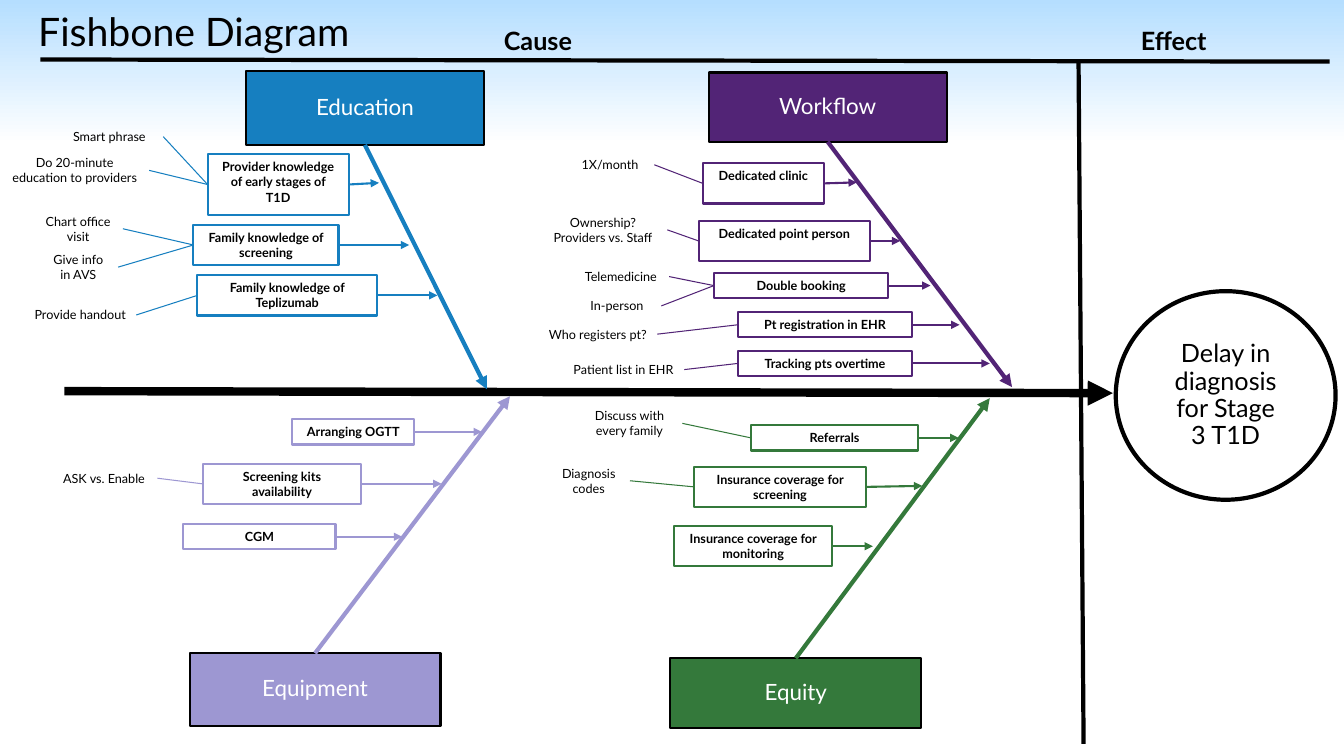
from dataclasses import dataclass
from typing import Optional

from lxml.etree import SubElement
from pptx import Presentation
from pptx.dml.color import RGBColor
from pptx.enum.shapes import MSO_CONNECTOR as Conn, MSO_SHAPE as Kind
from pptx.enum.text import MSO_ANCHOR as Anchor, PP_ALIGN as Align
from pptx.oxml.ns import qn
from pptx.shapes.autoshape import Shape
from pptx.shapes.connector import Connector
from pptx.util import Pt

BLACK, WHITE, SKY = "000000", "FFFFFF", "B5DEFF"
TOP, LEFT, BOTTOM, RIGHT = range(4)
ROW, PAIR = 18, 28.8


@dataclass
class Box:
    x: float
    y: float
    w: float
    h: float = ROW


@dataclass
class Note:
    text: str
    box: Box


@dataclass
class Cause:
    text: str
    box: Box
    tip: float
    notes: tuple[Note, ...] = ()
    rise: float = 0


@dataclass
class Branch:
    name: str
    color: str
    box: Box
    tip: tuple[float, float]
    side: int
    causes: tuple[Cause, ...]


BRANCHES = (
    Branch("Workflow", "522476", Box(506.2, 51.8, 170, 49.5), (722.9, 276.5), BOTTOM, (
        Cause("Dedicated clinic", Box(502, 116.6, 86.4, PAIR), 612,
              (Note("1X/month", Box(404, 108.7, 63.4)),), 0.7),
        Cause("Dedicated point person", Box(499, 157.7, 122.4, PAIR), 643,
              (Note("Ownership? Providers vs. Staff", Box(384.5, 149.8, 92.2, PAIR)),)),
        Cause("Double booking", Box(510, 195, 124.6), 664.6,
              (Note("Telemedicine", Box(409, 188.6, 69)),
               Note("In-person", Box(409, 209.5, 63.4)))),
        Cause("Pt registration in EHR", Box(527, 223, 124.6), 685.4,
              (Note("Who registers pt?", Box(384.5, 229.7, 85)),)),
        Cause("Tracking pts overtime", Box(527, 250.6, 124.6), 707,
              (Note("Patient list in EHR", Box(401.8, 255, 87)),)),
    )),
    Branch("Education", "167FC0", Box(175.7, 51, 170, 52.6), (347.8, 278), BOTTOM, (
        Cause("Provider knowledge of early stages of T1D", Box(148.3, 110.2, 100.8, 43.2), 270.7,
              (Note("Smart phrase", Box(39.6, 88.6, 77)),
               Note("Do 20-minute education to providers", Box(0, 107.3, 106.6, PAIR))), 1.2),
        Cause("Family knowledge of screening", Box(138.2, 160.6, 103.7, PAIR), 292.3,
              (Note("Chart office visit", Box(23.8, 149, 64, PAIR)),
               Note("Give info in AVS", Box(27.4, 176.4, 57, PAIR)))),
        Cause("Family knowledge of Teplizumab", Box(141, 196.6, 128.2, PAIR), 312.5,
              (Note("Provide handout", Box(17.3, 216, 80)),)),
    )),
    Branch("Equipment", "9D97D2", Box(135.4, 466.6, 179.3, 51.8), (364.3, 283), TOP, (
        Cause("Arranging OGTT", Box(208.8, 299.5, 87), 344.2),
        Cause("Screening kits availability", Box(144.7, 331.2, 113.4, PAIR), 315.4,
              (Note("ASK vs. Enable", Box(36, 332.6, 76.5)),)),
        Cause("CGM", Box(131, 374.4, 108.7), 287.3),
    )),
    Branch("Equity", "34793B", Box(478.8, 470.2, 179.3, 49.7), (707, 284.4), TOP, (
        Cause("Referrals", Box(536.4, 303.8, 119.5), 684.7,
              (Note("Discuss with every family", Box(411.8, 288, 75.6, PAIR)),)),
        Cause("Insurance coverage for screening", Box(496, 333.4, 122.4, PAIR), 658.8,
              (Note("Diagnosis codes", Box(391, 329, 59, PAIR)),), 0.7),
        Cause("Insurance coverage for monitoring", Box(481.7, 375.8, 112.5, PAIR), 623.5),
    )),
)

deck = Presentation()
deck.slide_width, deck.slide_height = Pt(960), Pt(540)
shapes = deck.slides.add_slide(deck.slide_layouts[6]).shapes


def rgb(code: str) -> RGBColor:
    return RGBColor.from_string(code)


def write(item: Shape, text: str, size: float, color: str = BLACK,
          bold: bool = False, align: Align = Align.CENTER) -> None:
    frame = item.text_frame
    frame.text = text
    frame.word_wrap = True
    frame.vertical_anchor = Anchor.TOP
    para = frame.paragraphs[0]
    para.alignment = align
    font = para.runs[0].font
    font.name, font.size, font.bold = "Lato", Pt(size), bold
    font.color.rgb = rgb(color)


def label(text: str, box: Box, size: float = 9, bold: bool = False,
          align: Align = Align.CENTER) -> Shape:
    item = shapes.add_textbox(Pt(box.x), Pt(box.y), Pt(box.w), Pt(box.h))
    write(item, text, size, BLACK, bold, align)
    item.text_frame.word_wrap = box.h > ROW
    return item


def panel(box: Box, edge: Optional[str], fill: Optional[str] = None,
          width: float = 1.5, kind: Kind = Kind.RECTANGLE) -> Shape:
    item = shapes.add_shape(kind, Pt(box.x), Pt(box.y), Pt(box.w), Pt(box.h))
    item.shadow.inherit = False
    if fill:
        item.fill.solid()
        item.fill.fore_color.rgb = rgb(fill)
    else:
        item.fill.background()
    if edge:
        item.line.color.rgb = rgb(edge)
        item.line.width = Pt(width)
    else:
        item.line.fill.background()
    return item


def badge(text: str, box: Box, fill: str, color: str, size: float,
          width: float = 1.5, kind: Kind = Kind.RECTANGLE) -> Shape:
    item = panel(box, BLACK, fill, width, kind)
    write(item, text, size, color)
    frame = item.text_frame
    frame.vertical_anchor = Anchor.MIDDLE
    frame.margin_left = frame.margin_right = Pt(15)
    frame.margin_top = frame.margin_bottom = Pt(10.8)
    frame.paragraphs[0].line_spacing = 0.9
    return item


def stroke(start: tuple[float, float], end: tuple[float, float], color: str,
           width: float, arrow: bool = False) -> Connector:
    item = shapes.add_connector(Conn.STRAIGHT, *(Pt(v) for v in start + end))
    item.line.color.rgb = rgb(color)
    item.line.width = Pt(width)
    if arrow:
        SubElement(item.line._get_or_add_ln(), qn("a:tailEnd"), type="triangle")
    SubElement(item._element.spPr, qn("a:effectLst"))
    return item


def draw(branch: Branch) -> None:
    head = badge(branch.name, branch.box, branch.color, WHITE, 16)
    rib = stroke((0, 0), branch.tip, branch.color, 3, True)
    rib.begin_connect(head, branch.side)
    for cause in branch.causes:
        card = panel(cause.box, branch.color)
        write(card, cause.text, 9, bold=True)
        level = cause.box.y + cause.box.h / 2 - cause.rise
        twig = stroke((0, 0), (cause.tip, level), branch.color, 1.5, True)
        twig.begin_connect(card, RIGHT)
        for note in cause.notes:
            item = label(note.text, note.box)
            link = stroke((0, 0), (0, 0), branch.color, 0.75)
            link.begin_connect(card, LEFT)
            link.end_connect(item, RIGHT)


def main() -> None:
    band = panel(Box(0, 0, 960, 103), None)
    band.fill.gradient()
    band.fill.gradient_angle = 270
    for stop, code in zip(band.fill.gradient_stops, (SKY, WHITE)):
        stop.color.rgb = rgb(code)
    stroke((28.8, 42.5), (949.7, 44), BLACK, 3)
    stroke((770.4, 44), (774, 531.4), BLACK, 3)
    label("Fishbone Diagram", Box(20.2, 1.4, 322.6, 41), 28, align=Align.LEFT)
    label("Cause", Box(352.8, 14.4, 78.5, 29), 18, True, Align.LEFT)
    label("Effect", Box(807.8, 14.4, 74.2, 29), 18, True, Align.LEFT)
    badge("Delay in diagnosis for Stage 3 T1D", Box(797, 208, 157, 149),
          WHITE, BLACK, 18, 3, Kind.OVAL)
    stroke((46, 279.4), (795, 280.8), BLACK, 6, True)
    for branch in BRANCHES:
        draw(branch)
    deck.save("out.pptx")


if __name__ == "__main__":
    main()
